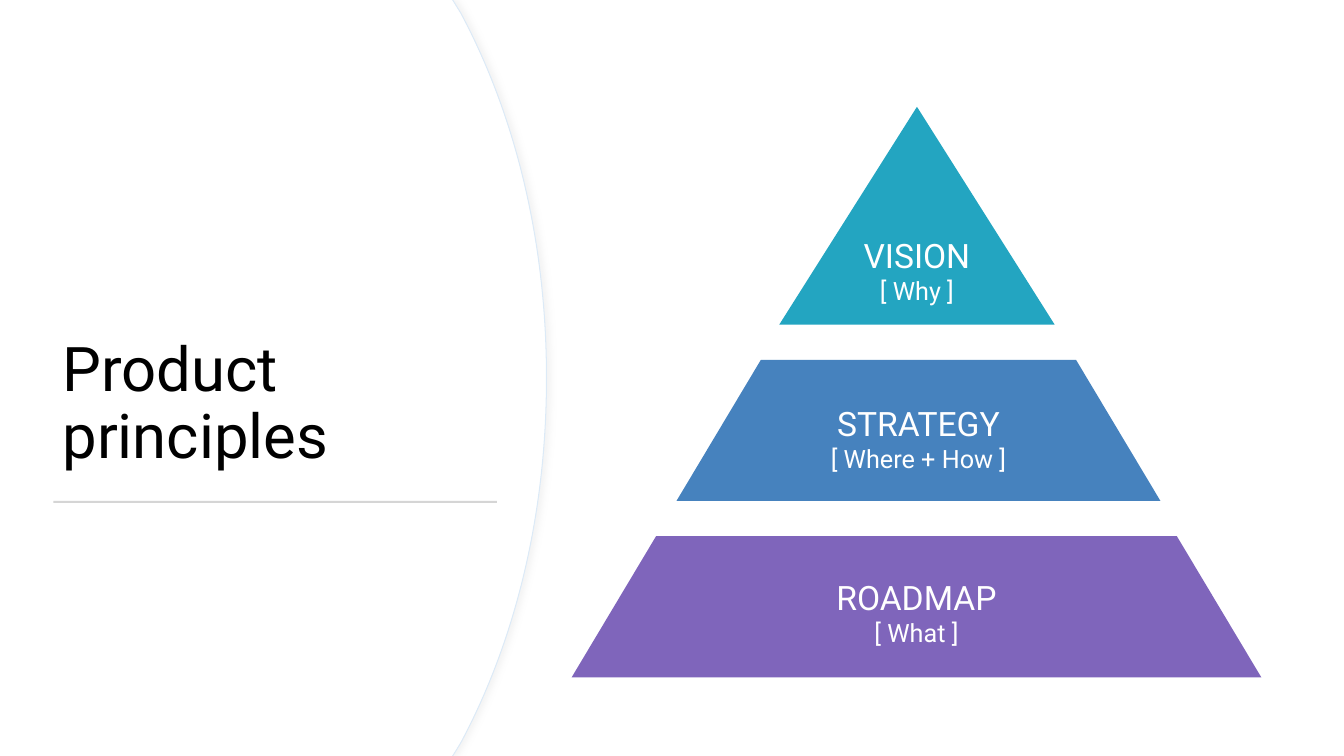
from dataclasses import dataclass

from lxml.etree import SubElement
from pptx import Presentation
from pptx.dml.color import RGBColor
from pptx.enum.shapes import MSO_SHAPE
from pptx.enum.text import MSO_ANCHOR, MSO_AUTO_SIZE, PP_ALIGN
from pptx.oxml.ns import qn
from pptx.util import Inches, Pt


@dataclass(frozen=True)
class Theme:
    font: str = "Roboto"
    white: str = "FFFFFF"
    title: str = "000000"
    rule: str = "D5D5D5"
    panel_edge: str = "DCEAF7"
    shadow: str = "D9D9D9"
    vision: str = "23A5C1"
    strategy: str = "4682BE"
    roadmap: str = "7F65BB"
    title_size: int = 44
    tier_size: int = 24
    question_size: int = 18


THEME = Theme()

SLIDE_HEIGHT = 7.5
PYRAMID_TOP = 1.06
TIER_GAP = 0.35
TRAPEZOID_SLANT = 0.598

# Shape, left, width, height, fill, name, question
TIERS = [
    (MSO_SHAPE.ISOSCELES_TRIANGLE, 7.73, 2.73, 2.16, THEME.vision,
     "VISION", "[ Why ]"),
    (MSO_SHAPE.TRAPEZOID, 6.71, 4.8, 1.4, THEME.strategy,
     "STRATEGY", "[ Where + How ]"),
    (MSO_SHAPE.TRAPEZOID, 5.67, 6.84, 1.4, THEME.roadmap,
     "ROADMAP", "[ What ]"),
]


def set_format(target, values):
    for name, value in values.items():
        setattr(target, name, value)


def set_font(font, size, color):
    set_format(font, {"name": THEME.font, "size": Pt(size)})
    font.color.rgb = RGBColor.from_string(color)


def paint(shape, color):
    shape.shadow.inherit = False
    shape.fill.solid()
    shape.fill.fore_color.rgb = RGBColor.from_string(color)
    shape.line.fill.background()


def add_block(slide, kind, left, top, width, height, color):
    shape = slide.shapes.add_shape(
        kind, Inches(left), Inches(top), Inches(width), Inches(height))
    paint(shape, color)
    return shape


def bend(segment, controls):
    """Turn a straight outline segment into a cubic curve."""
    segment.tag = qn("a:cubicBezTo")
    for position, (x, y) in enumerate(controls):
        point = segment.makeelement(
            qn("a:pt"), {"x": str(Inches(x)), "y": str(Inches(y))})
        segment.insert(position, point)


def add_panel(slide, right):
    """White panel whose right side bulges out to the given position."""
    middle = SLIDE_HEIGHT / 2
    upper = [(right - 0.93, 0), (right - 0.85, 0.13), (right, middle)]
    controls = [(right - 0.31, 1.14), (right, 2.39)]

    def mirror(points):
        return [(x, SLIDE_HEIGHT - y) for x, y in reversed(points)]

    outline = upper + mirror(upper[:-1]) + [(0, SLIDE_HEIGHT)]
    builder = slide.shapes.build_freeform(0, 0)
    builder.add_line_segments([(Inches(x), Inches(y)) for x, y in outline])
    panel = builder.convert_to_shape()
    segments = list(panel.element.iter(qn("a:lnTo")))
    bend(segments[2], controls)
    bend(segments[3], mirror(controls))
    paint(panel, THEME.white)
    return panel


def add_edge(panel):
    panel.line.color.rgb = RGBColor.from_string(THEME.panel_edge)
    panel.line.width = Pt(0.75)
    effects = panel.element.spPr.find(qn("a:effectLst"))
    shadow = SubElement(
        effects, qn("a:outerShdw"), blurRad=str(Pt(4)), dist=str(Pt(3)),
        dir="0", algn="l", rotWithShape="0")
    color = SubElement(shadow, qn("a:srgbClr"), val=THEME.shadow)
    SubElement(color, qn("a:alpha"), val="30000")


def place_title(slide, text):
    title = slide.shapes.title
    set_format(title, {"left": Inches(0.52), "top": Inches(1.23),
                       "width": Inches(4.4), "height": Inches(3.5)})
    frame = title.text_frame
    frame.text = text
    set_format(frame, {"word_wrap": True, "auto_size": MSO_AUTO_SIZE.NONE,
                       "vertical_anchor": MSO_ANCHOR.BOTTOM})
    paragraph = frame.paragraphs[0]
    set_format(paragraph, {"alignment": PP_ALIGN.LEFT, "line_spacing": 0.9})
    set_font(paragraph.runs[0].font, THEME.title_size, THEME.title)
    # Bring the title in front of the panel
    title.element.getparent().append(title.element)


def add_tier(slide, kind, left, top, width, height, color, name, question):
    tier = add_block(slide, kind, left, top, width, height, color)
    if kind == MSO_SHAPE.TRAPEZOID:
        tier.adjustments[0] = TRAPEZOID_SLANT
    frame = tier.text_frame
    frame.text = f"{name}\n{question}"
    set_format(frame, {"word_wrap": True, "vertical_anchor": MSO_ANCHOR.MIDDLE})
    for paragraph, size in zip(frame.paragraphs,
                               (THEME.tier_size, THEME.question_size)):
        paragraph.alignment = PP_ALIGN.CENTER
        set_font(paragraph.runs[0].font, size, THEME.white)


def main():
    presentation = Presentation()
    set_format(presentation, {"slide_width": Inches(13.33),
                              "slide_height": Inches(SLIDE_HEIGHT)})
    slide = presentation.slides.add_slide(presentation.slide_layouts[5])

    # Curved panel: an edged sheet under a plain one
    add_edge(add_panel(slide, 5.42))
    add_panel(slide, 5.41)

    # Title and rule
    place_title(slide, "Product principles")
    add_block(slide, MSO_SHAPE.RECTANGLE, 0.53, 4.97, 4.4, 0.02, THEME.rule)

    # Pyramid
    top = PYRAMID_TOP
    for kind, left, width, height, color, name, question in TIERS:
        add_tier(slide, kind, left, top, width, height, color, name, question)
        top += height + TIER_GAP

    presentation.save("out.pptx")


if __name__ == "__main__":
    main()
